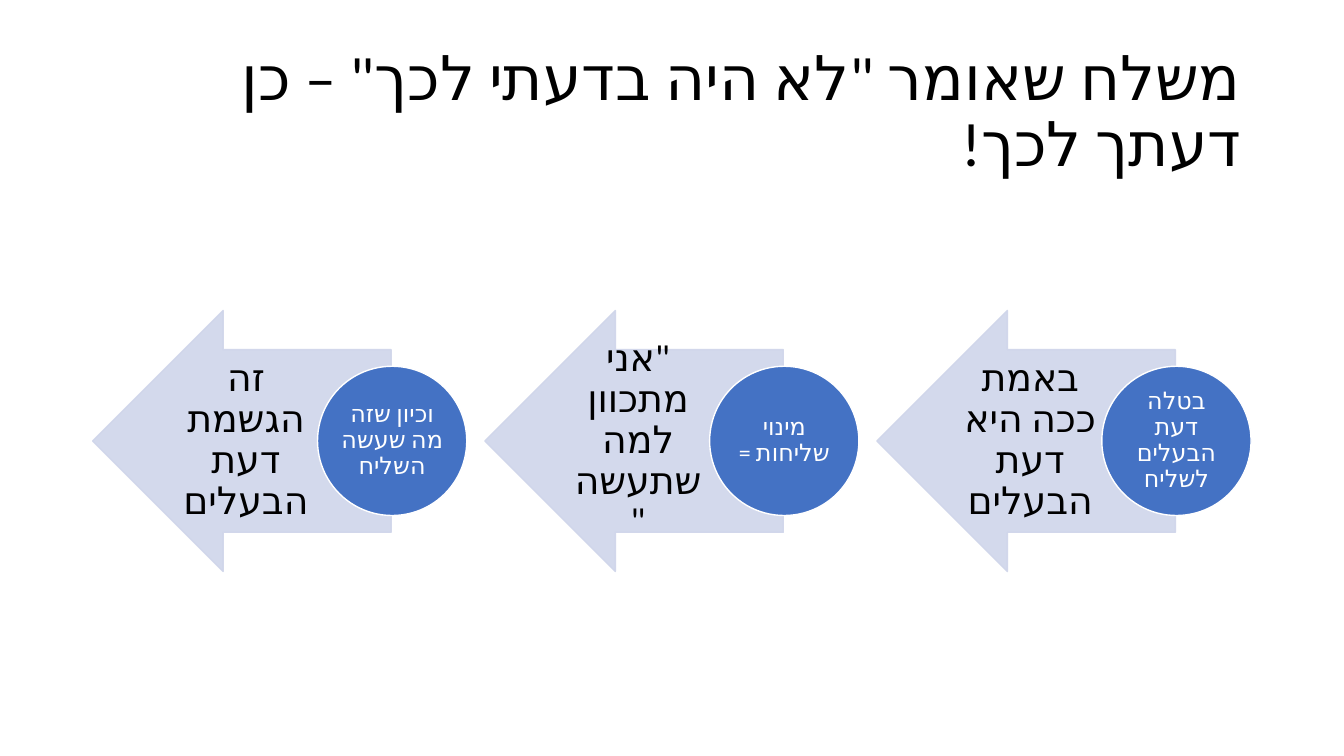
from dataclasses import dataclass

from lxml.etree import SubElement
from pptx import Presentation
from pptx.dml.color import RGBColor
from pptx.enum.shapes import MSO_SHAPE
from pptx.enum.text import MSO_ANCHOR, PP_ALIGN
from pptx.oxml.ns import qn
from pptx.util import Pt


@dataclass(frozen=True)
class Theme:
    font: str = "Calibri"
    text: str = "000000"
    light: str = "FFFFFF"
    arrow: str = "CFD5EA"
    circle: str = "4472C4"
    title_size: int = 44
    arrow_size: int = 27
    circle_size: int = 17


class SlideBuilder:
    def __init__(self, slide, theme):
        self.slide = slide
        self.theme = theme

    def shape(self, kind, box, fill, line, opacity=100, adjustments=()):
        """Draw a filled preset shape with a 1 pt outline."""
        shape = self.slide.shapes.add_shape(kind, *map(Pt, box))
        shape.shadow.inherit = False
        for index, value in enumerate(adjustments):
            shape.adjustments[index] = value
        shape.line.width = Pt(1)
        for paint, color in ((shape.fill, fill), (shape.line.fill, line)):
            paint.solid()
            paint.fore_color.rgb = RGBColor.from_string(color)
        if opacity < 100:
            for color in shape._element.spPr.iter(qn("a:srgbClr")):
                SubElement(color, qn("a:alpha"), val=str(opacity * 1000))

    def text(self, words, box, size, color, align=PP_ALIGN.CENTER,
             insets=(7.2, 3.6, 7.2, 3.6)):
        """Write one right-to-left paragraph, centred vertically."""
        frame = self.slide.shapes.add_textbox(*map(Pt, box)).text_frame
        left, top, right, bottom = map(Pt, insets)
        frame_format = {
            "word_wrap": True, "vertical_anchor": MSO_ANCHOR.MIDDLE,
            "margin_left": left, "margin_top": top,
            "margin_right": right, "margin_bottom": bottom,
        }
        paragraph = frame.paragraphs[0]
        run = paragraph.add_run()
        run.text = words
        paragraph_format = {"alignment": align, "line_spacing": 0.9}
        font_format = {"name": self.theme.font, "size": Pt(size)}
        for target, values in ((frame, frame_format),
                               (paragraph, paragraph_format),
                               (run.font, font_format)):
            for name, value in values.items():
                setattr(target, name, value)
        run.font.color.rgb = RGBColor.from_string(color)

        # Hebrew direction, language and complex-script font
        paragraph._p.get_or_add_pPr().set("rtl", "1")
        properties = run._r.get_or_add_rPr()
        properties.set("lang", "he-IL")
        SubElement(properties, qn("a:cs"), typeface=self.theme.font)

    def step(self, left, circle_words, arrow_words):
        """Draw an arrow with its statement and the circle at its tail."""
        theme = self.theme
        self.shape(MSO_SHAPE.LEFT_ARROW, (left, 221.8, 213.2, 186.4),
                   theme.arrow, theme.arrow, 90, (0.7, 0.5))
        self.text(arrow_words, (left + 56.2, 249.8, 104.4, 130.4),
                  theme.arrow_size, theme.text, insets=(5, 1.4, 2.9, 1.4))
        self.shape(MSO_SHAPE.OVAL, (left + 160.6, 261.6, 106.6, 106.6),
                   theme.circle, theme.light)
        self.text(circle_words, (left + 176.2, 277.2, 75.4, 75.4),
                  theme.circle_size, theme.light, insets=(0.7,) * 4)


STEPS = [
    ("בטלה דעת הבעלים לשליח", "באמת ככה היא דעת הבעלים"),
    ("מינוי שליחות =", "\"אני מתכוון למה שתעשה\""),
    ("וכיון שזה מה שעשה השליח", "זה הגשמת דעת הבעלים"),
]
FIRST_LEFT = 626.4
STEP_PITCH = 280.1


def main():
    deck = Presentation()
    deck.slide_width, deck.slide_height = Pt(960), Pt(540)
    theme = Theme()
    builder = SlideBuilder(deck.slides.add_slide(deck.slide_layouts[6]), theme)

    # Title
    builder.text("משלח שאומר \"לא היה בדעתי לכך\" – כן דעתך לכך!",
                 (66, 28.8, 828, 104.4), theme.title_size, theme.text,
                 PP_ALIGN.RIGHT)

    # Steps, running from right to left
    for index, (circle_words, arrow_words) in enumerate(STEPS):
        builder.step(FIRST_LEFT - index * STEP_PITCH, circle_words, arrow_words)

    deck.save("out.pptx")


if __name__ == "__main__":
    main()
